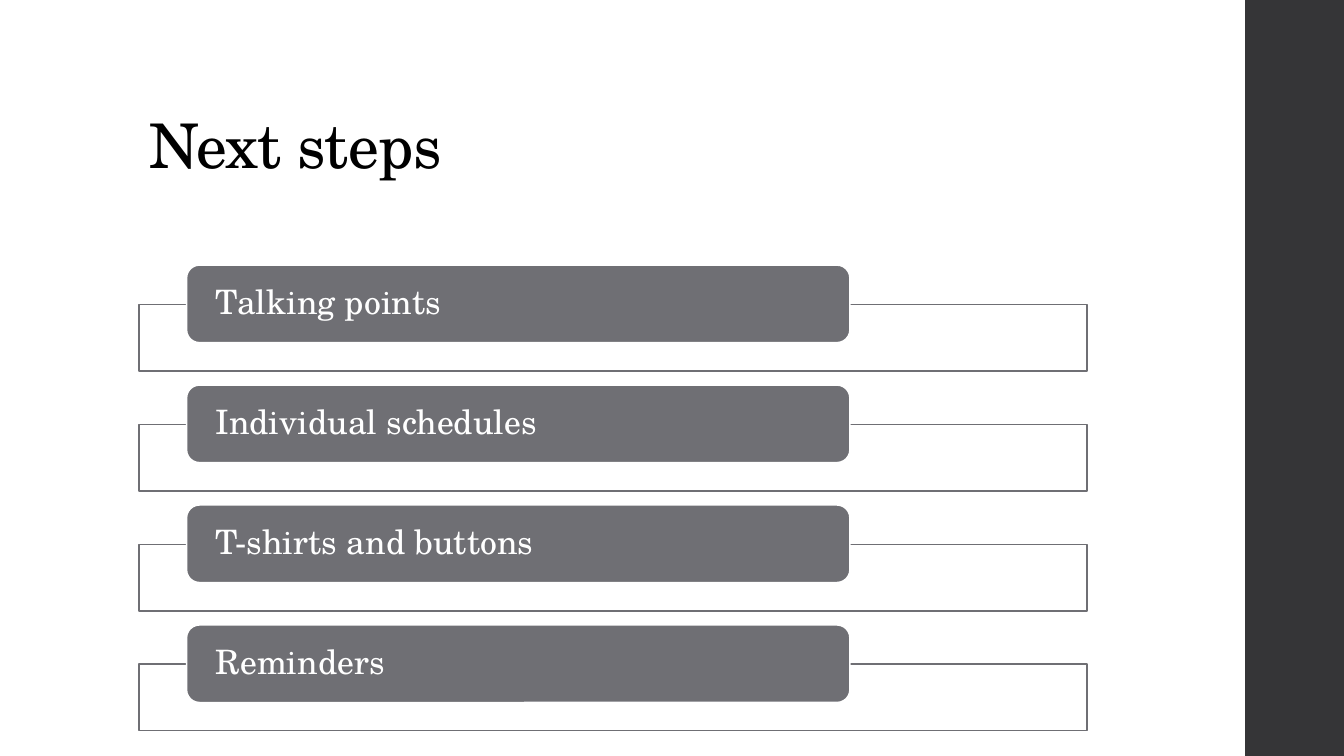
from pptx import Presentation
from pptx.dml.color import RGBColor
from pptx.enum.shapes import MSO_SHAPE as Shape
from pptx.enum.text import MSO_ANCHOR as Anchor, PP_ALIGN as Align
from pptx.util import Inches, Pt

FONT = "TeX Gyre Schola"
WHITE, BLACK, GREY, DARK = "FFFFFF", "000000", "6F6F74", "353537"
STEPS = ["Talking points", "Individual schedules", "T-shirts and buttons", "Reminders"]
LEFT = 1.38
FIRST_TOP, STEP_PITCH = 2.63, 1.19


def color(hex_string):
    return RGBColor.from_string(hex_string)


def add_box(slide, kind, left, top, width, height, fill, line=None):
    box = slide.shapes.add_shape(
        kind, Inches(left), Inches(top), Inches(width), Inches(height))
    box.shadow.inherit = False
    box.fill.solid()
    box.fill.fore_color.rgb = color(fill)
    if line:
        box.line.color.rgb = color(line)
        box.line.width = Pt(1.1)
    else:
        box.line.fill.background()
    return box


def write_text(box, text, size, text_color, anchor, inset_x, inset_y):
    frame = box.text_frame
    frame.word_wrap = True
    frame.vertical_anchor = anchor
    frame.margin_left = frame.margin_right = Inches(inset_x)
    frame.margin_top = frame.margin_bottom = Inches(inset_y)
    para = frame.paragraphs[0]
    para.alignment = Align.LEFT
    para.line_spacing = 0.9
    para.font.name = FONT
    para.font.size = Pt(size)
    para.font.color.rgb = color(text_color)
    span = para.add_run()
    span.text = text
    return span


def add_title(slide, text):
    box = slide.shapes.add_textbox(
        Inches(LEFT), Inches(0.4), Inches(10.6), Inches(1.45))
    span = write_text(box, text, 44, BLACK, Anchor.BOTTOM, 0.1, 0.05)
    # Letter spacing, in hundredths of a point
    span.font._element.set("spc", "-50")


def add_step(slide, text, top):
    # The label straddles the top edge of its frame
    add_box(slide, Shape.RECTANGLE, LEFT, top + 0.39, 9.4, 0.66, WHITE, GREY)
    label = add_box(slide, Shape.ROUNDED_RECTANGLE, 1.85, top, 6.58, 0.77, GREY, WHITE)
    write_text(label, text, 24, WHITE, Anchor.MIDDLE, 0.25, 0)


def main():
    deck = Presentation()
    deck.slide_width, deck.slide_height = Inches(13.33), Inches(7.5)
    page = deck.slides.add_slide(deck.slide_layouts[6])

    # Side band and title
    add_box(page, Shape.RECTANGLE, 12.35, 0, 0.98, 7.5, DARK)
    add_title(page, "Next steps")

    # Evenly spaced list of steps
    for index, step in enumerate(STEPS):
        add_step(page, step, FIRST_TOP + index * STEP_PITCH)

    deck.save("out.pptx")


if __name__ == "__main__":
    main()
